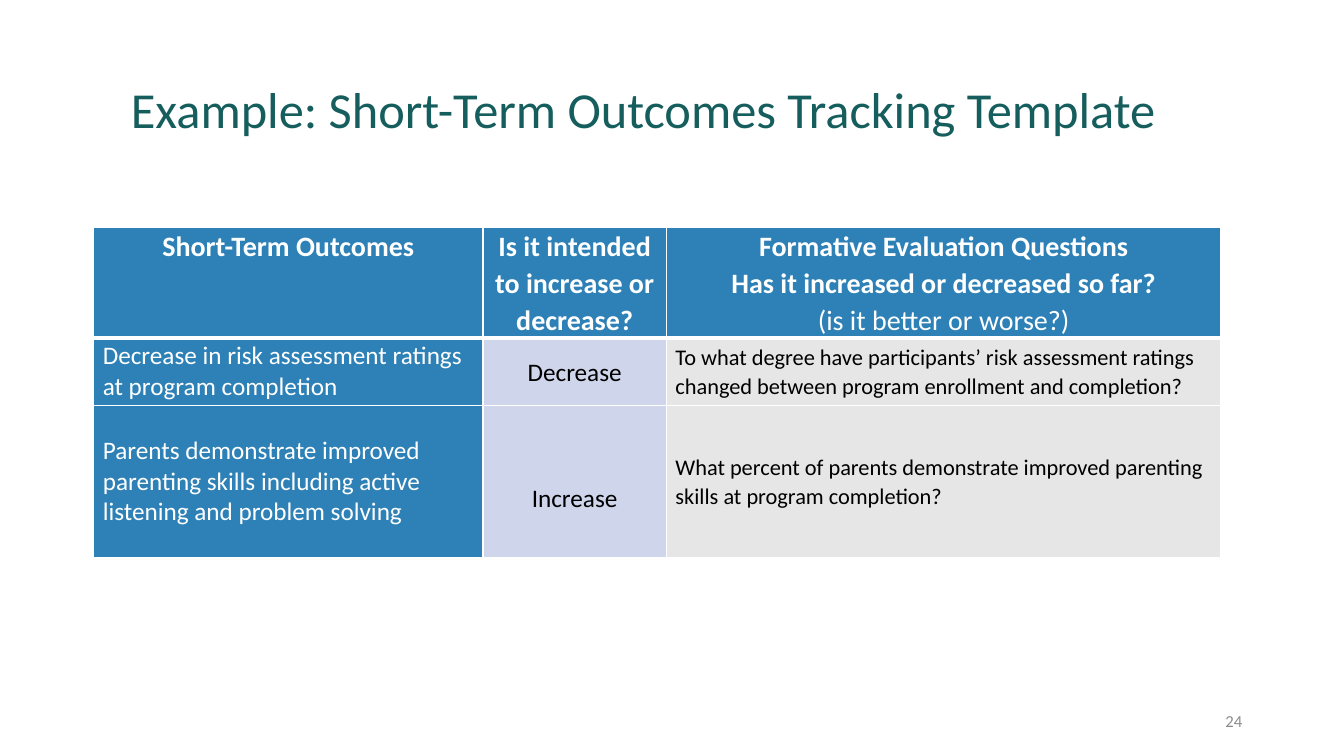
"""Build the short-term outcomes tracking template slide."""
import pptx
import pptx.dml.color
import pptx.enum.text
import pptx.oxml
import pptx.oxml.ns
import pptx.util

Inches, Pt = pptx.util.Inches, pptx.util.Pt
RGBColor = pptx.dml.color.RGBColor
ALIGN, ANCHOR = pptx.enum.text.PP_ALIGN, pptx.enum.text.MSO_ANCHOR

FONT = "Calibri"
TEAL = RGBColor(0x15, 0x5E, 0x5D)
BLUE = RGBColor(0x2E, 0x81, 0xB6)
LAVENDER = RGBColor(0xCF, 0xD5, 0xEA)
LIGHT_GRAY = RGBColor(0xE7, 0xE6, 0xE6)
GRAY = RGBColor(0x8C, 0x8C, 0x8C)
WHITE = RGBColor(0xFF, 0xFF, 0xFF)
BLACK = RGBColor(0, 0, 0)

TITLE = "Example: Short-Term Outcomes Tracking Template"
PAGE = "24"
HEADERS = [
    [("Short-Term Outcomes", True)],
    [("Is it intended to increase or decrease?", True)],
    [("Formative Evaluation Questions", True),
     ("Has it increased or decreased so far?", True),
     ("(is it better or worse?)", False)],
]
OUTCOMES = [
    ("Decrease in risk assessment ratings at program completion",
     "Decrease",
     "To what degree have participants’ risk assessment ratings changed "
     "between program enrollment and completion?"),
    ("Parents demonstrate improved parenting skills including active "
     "listening and problem solving",
     "Increase",
     "What percent of parents demonstrate improved parenting skills at "
     "program completion?"),
]
COL_WIDTHS = [3.86, 1.82, 5.5]
ROW_HEIGHTS = [0.67, 0.67, 1.51]
BODY_STYLES = [
    (BLUE, WHITE, 18, ALIGN.LEFT, 1.0),
    (LAVENDER, BLACK, 18, ALIGN.CENTER, 1.07),
    (LIGHT_GRAY, BLACK, 16, ALIGN.LEFT, 1.07),
]
INCREASE_DROP = 0.33


def write(p, text, size, color, align=ALIGN.LEFT, spacing=1.0, bold=False):
    p.alignment = align
    p.line_spacing = spacing
    r = p.add_run()
    r.text = text
    r.font.name, r.font.size, r.font.bold = FONT, Pt(size), bold
    r.font.color.rgb = color


def add_label(slide, box, *style):
    tf = slide.shapes.add_textbox(*map(Inches, box)).text_frame
    tf.word_wrap = True
    tf.vertical_anchor = ANCHOR.MIDDLE
    write(tf.paragraphs[0], *style)


def style_cell(cell, fill, top, bottom):
    cell.margin_left = cell.margin_right = Inches(0.09)
    cell.margin_top = cell.margin_bottom = 0
    cell.fill.solid()
    cell.fill.fore_color.rgb = fill
    tc_pr = cell._tc.get_or_add_tcPr()
    for i, (side, width) in enumerate(zip("LRTB", (1, 1, top, bottom))):
        tc_pr.insert(i, pptx.oxml.parse_xml(
            f'<a:ln{side} {pptx.oxml.ns.nsdecls("a")} w="{Pt(width)}">'
            f'<a:solidFill><a:srgbClr val="{WHITE}"/></a:solidFill></a:ln{side}>'))


def add_outcomes_table(slide):
    table = slide.shapes.add_table(
        len(ROW_HEIGHTS), len(COL_WIDTHS), Inches(0.93), Inches(2.26),
        Inches(sum(COL_WIDTHS)), Inches(sum(ROW_HEIGHTS))).table
    for col, width in zip(table.columns, COL_WIDTHS):
        col.width = Inches(width)
    for row, height in zip(table.rows, ROW_HEIGHTS):
        row.height = Inches(height)
    for c, lines in enumerate(HEADERS):
        cell = table.cell(0, c)
        style_cell(cell, BLUE, 1, 3)
        tf = cell.text_frame
        for i, (text, bold) in enumerate(lines):
            p = tf.add_paragraph() if i else tf.paragraphs[0]
            write(p, text, 20, WHITE, ALIGN.CENTER, 1.07, bold)
    for n, outcome in enumerate(OUTCOMES, 1):
        for c, (text, style) in enumerate(zip(outcome, BODY_STYLES)):
            fill, color, size, align, spacing = style
            cell = table.cell(n, c)
            style_cell(cell, fill, 3 if n == 1 else 1, 1)
            cell.vertical_anchor = ANCHOR.MIDDLE
            write(cell.text_frame.paragraphs[0], text, size, color, align, spacing)
    table.cell(2, 1).margin_top = Inches(INCREASE_DROP)


def main():
    prs = pptx.Presentation()
    prs.slide_width, prs.slide_height = Inches(13.33), Inches(7.5)
    slide = prs.slides.add_slide(prs.slide_layouts[6])
    add_outcomes_table(slide)
    add_label(slide, (1.2, 0.89, 11.5, 0.45), TITLE, 36, TEAL, ALIGN.LEFT, 0.9)
    add_label(slide, (9.42, 6.95, 3, 0.4), PAGE, 12, GRAY, ALIGN.RIGHT)
    prs.save("out.pptx")


if __name__ == "__main__":
    main()
